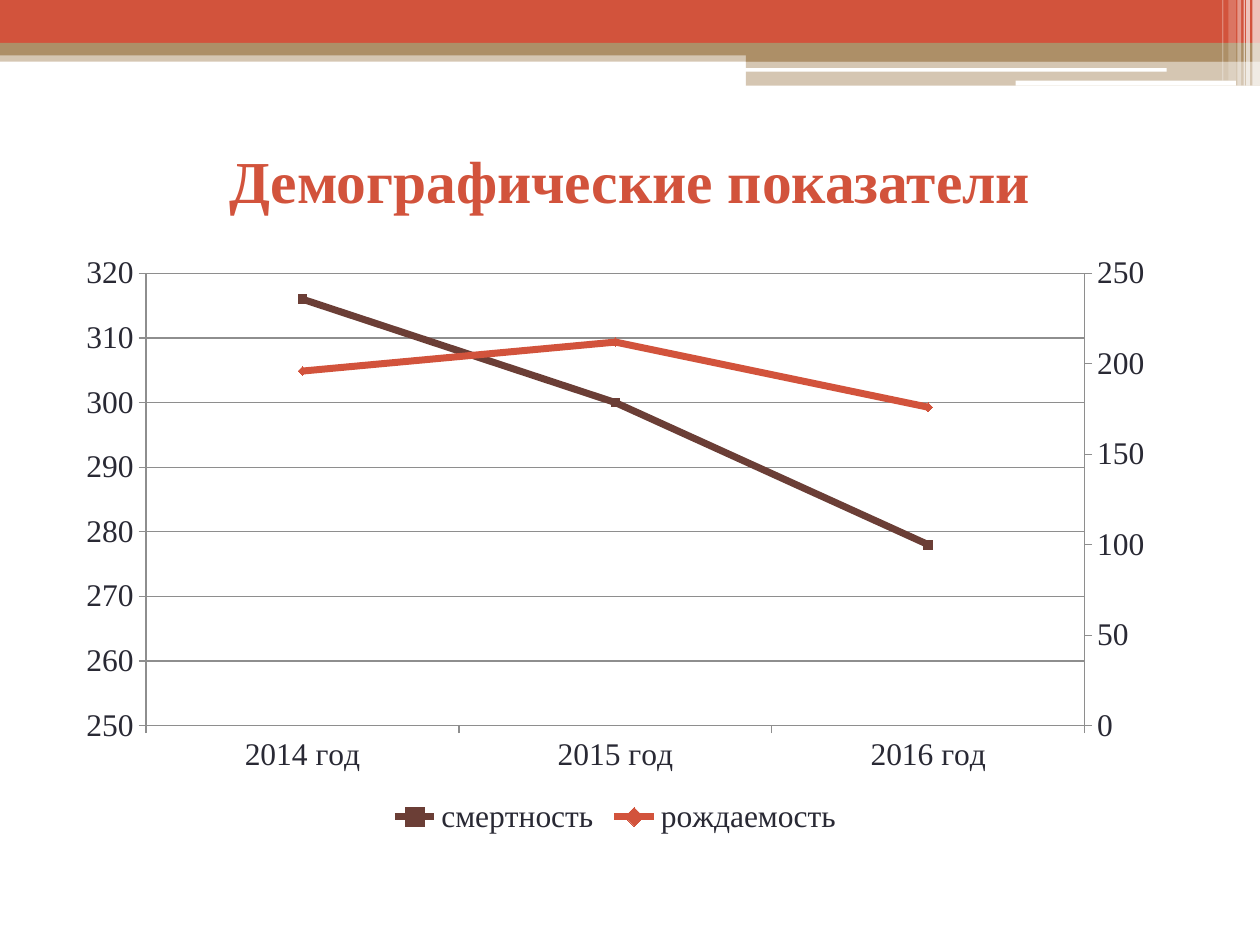
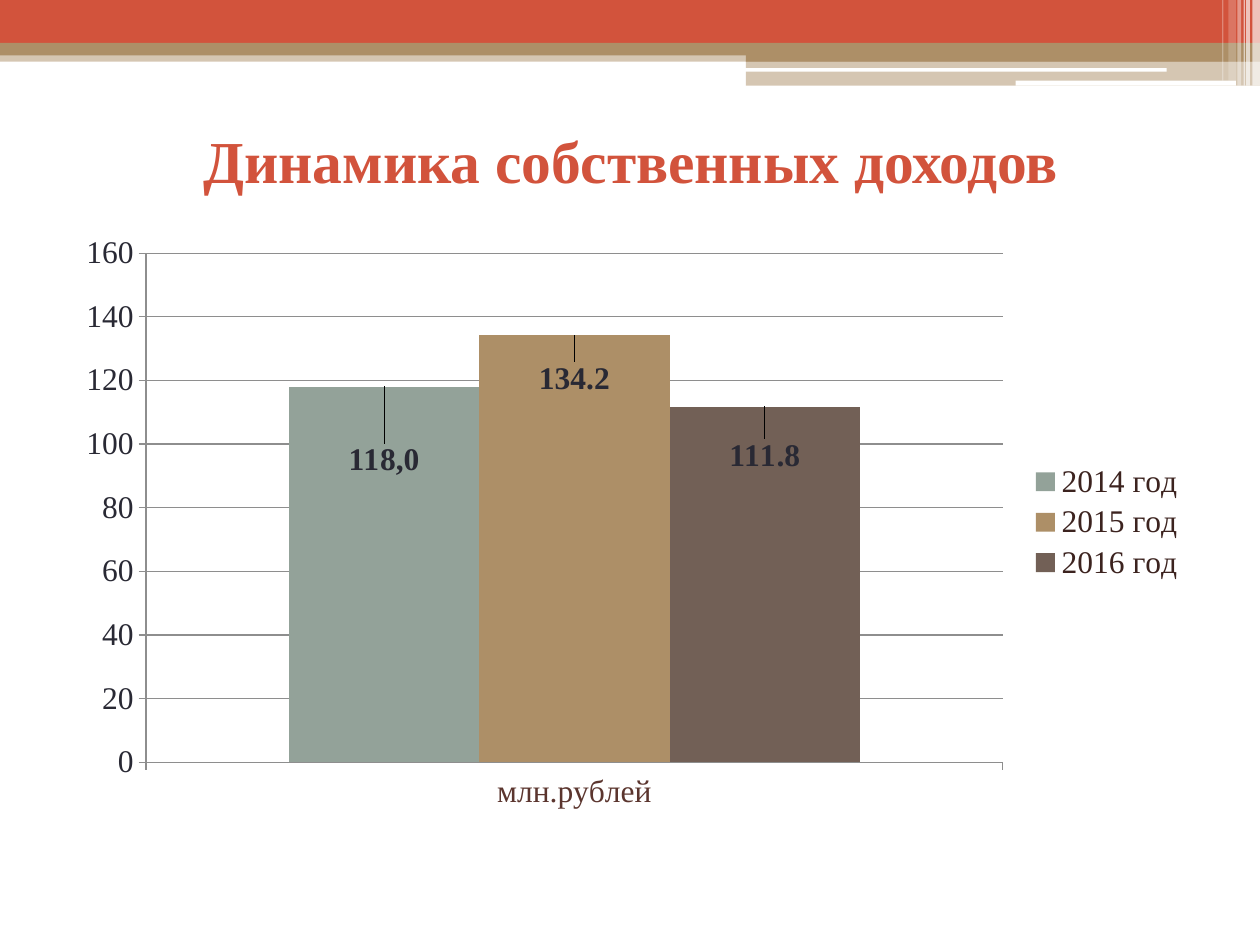
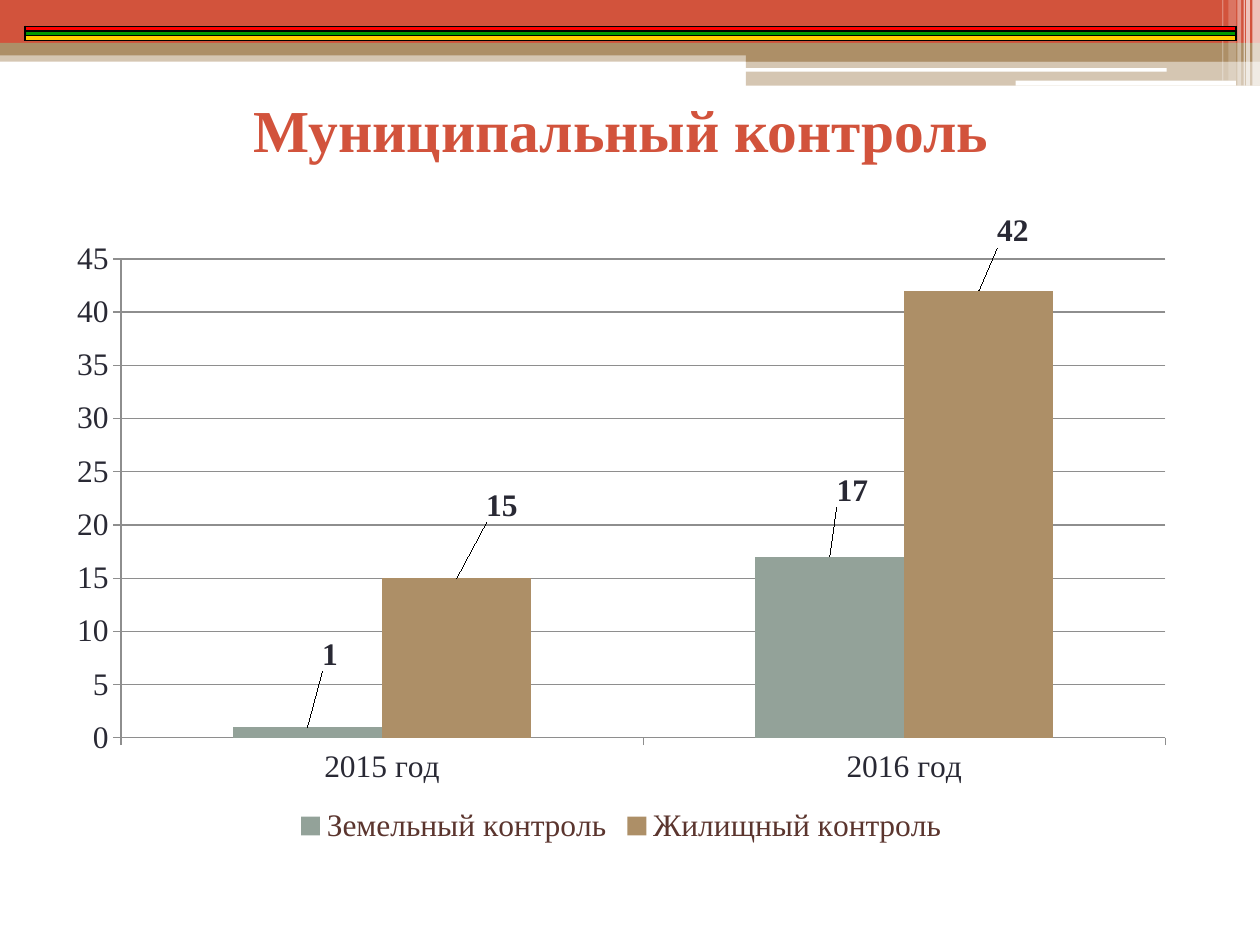
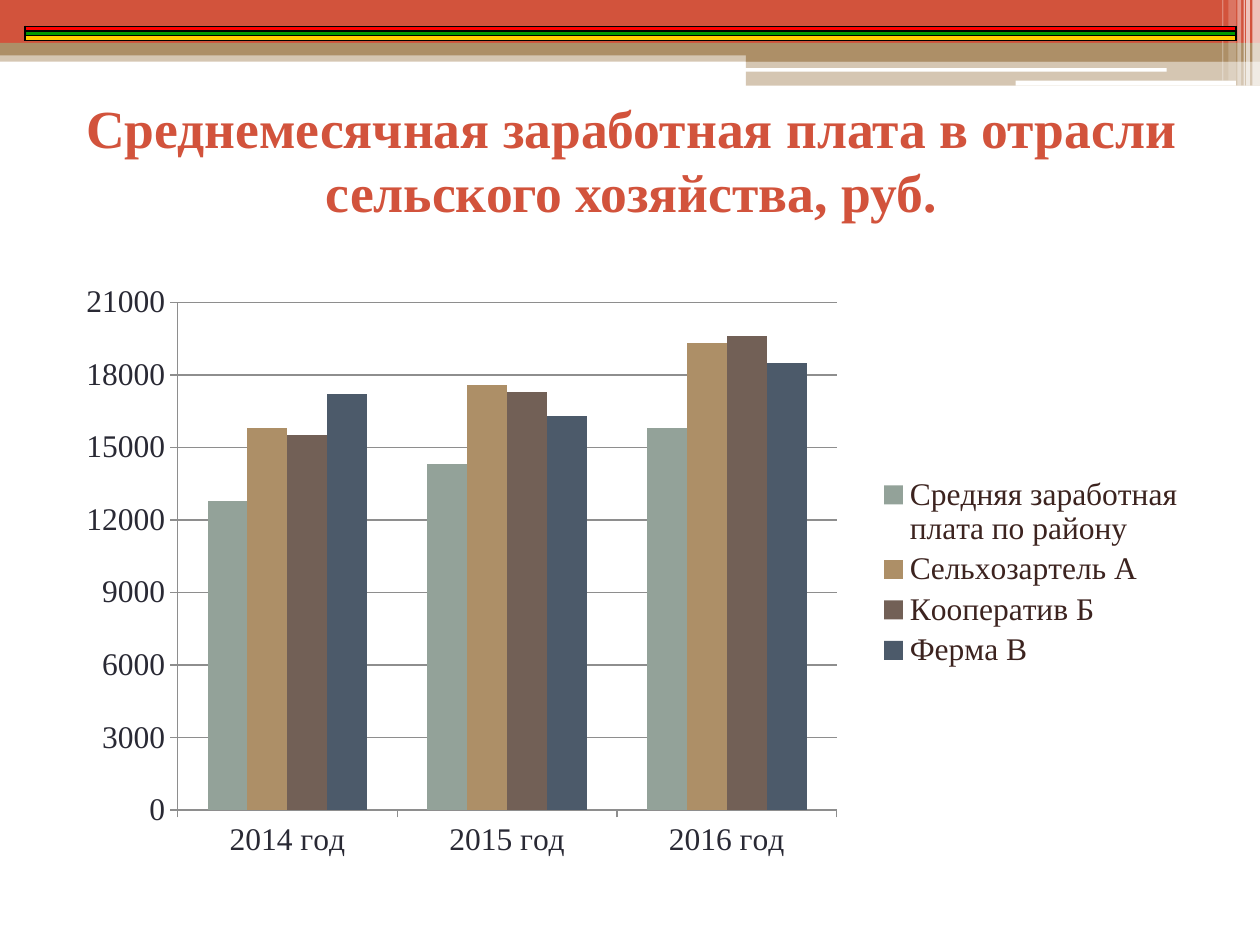
import copy

import lxml.etree
import pptx
import pptx.chart.axis
import pptx.chart.data
import pptx.dml.color
import pptx.enum.chart
import pptx.enum.shapes
import pptx.enum.text
import pptx.oxml.ns
import pptx.util

Inches, Pt = pptx.util.Inches, pptx.util.Pt
RGB = pptx.dml.color.RGBColor.from_string
SubElement, qn = lxml.etree.SubElement, pptx.oxml.ns.qn
ChartType = pptx.enum.chart.XL_CHART_TYPE
LegendPlace = pptx.enum.chart.XL_LEGEND_POSITION
Marker = pptx.enum.chart.XL_MARKER_STYLE
Shape = pptx.enum.shapes.MSO_SHAPE

FONT = "Times New Roman"
COLORS = {
    "red": "D2533C", "tan": "AD8F67", "white": "FFFFFF", "text": "292934",
    "sage": "93A299", "umber": "726056", "slate": "4C5A6A", "mortality": "6B3E36",
    "brown": "5B352E", "dark brown": "3C231F", "grid": "8E8E8E", "black": "000000",
    "flag red": "FF0000", "flag green": "009900", "flag yellow": "FFCC00",
}
COLUMN_COLORS = ["sage", "tan", "umber", "slate"]

# left, top, width, height, colour, opacity in percent
BANDS = [
    (0, 0.4, 10, 0.09, "tan", 50),
    (0, 0, 10, 0.34, "red", 100),
    (0, 0.34, 10, 0.1, "tan", 100),
    (5.92, 0.39, 4.08, 0.1, "tan", 100),
    (5.92, 0.48, 4.08, 0.2, "tan", 50),
    (5.91, 0.54, 3.35, 0.03, "white", 100),
    (8.06, 0.64, 1.75, 0.04, "white", 100),
    (9.94, 0, 0.06, 0.68, "white", 65),
    (9.89, 0, 0.03, 0.68, "white", 65),
    (9.87, 0, 0.01, 0.68, "white", 60),
    (9.82, 0, 0.03, 0.68, "white", 40),
    (9.75, 0, 0.06, 0.64, "white", 20),
    (9.7, 0, 0.01, 0.64, "white", 30),
]

# scale: minimum, maximum, step; labels: text or None, shift right, shift down
SLIDES = [
    {
        "title": "Демографические показатели", "title_at": (0.5, 0.84), "size": 34,
        "chart_at": (0.51, 1.94, 8.75, 4.73), "plot_at": (1.16, 2.17, 7.45, 3.59),
        "kind": ChartType.LINE_MARKERS_STACKED,
        "scale": (250, 320, 10), "right_scale": (0, 250, 50),
        "legend": LegendPlace.BOTTOM, "legend_color": "text", "category_color": "text",
        "categories": ["2014 год", "2015 год", "2016 год"],
        "series": {"смертность": [316, 300, 278], "рождаемость": [196, 212, 176]},
        "labels": [], "flag": False,
    },
    {
        "title": "Динамика собственных доходов", "title_at": (0.51, 0.68), "size": 34,
        "chart_at": (0.51, 1.78, 9, 4.73), "plot_at": (1.16, 2.01, 6.8, 4.04),
        "kind": ChartType.COLUMN_CLUSTERED, "scale": (0, 160, 20),
        "legend": LegendPlace.RIGHT, "legend_color": "dark brown", "category_color": "brown",
        "categories": ["млн.рублей"],
        "series": {"2014 год": [118], "2015 год": [134.2], "2016 год": [111.8]},
        "labels": [[("118,0", 0, 0.16)], [(None, 0, 0.11)], [(None, 0, 0.12)]],
        "flag": False,
    },
    {
        "title": "Муниципальный контроль", "title_at": (0.43, 0.44), "size": 34,
        "chart_at": (0.43, 1.7, 9, 5.04), "plot_at": (0.96, 2.02, 8.29, 3.83),
        "kind": ChartType.COLUMN_CLUSTERED, "scale": (0, 45, 5),
        "legend": LegendPlace.BOTTOM, "legend_color": "brown", "category_color": "text",
        "categories": ["2015 год", "2016 год"],
        "series": {"Земельный контроль": [1, 17], "Жилищный контроль": [15, 42]},
        "labels": [[(None, 0.02, -0.08), (None, 0.02, -0.07)],
                   [(None, 0.04, -0.08), (None, 0.03, -0.06)]],
        "flag": True,
    },
    {
        "title": "Среднемесячная заработная плата в отрасли сельского хозяйства, руб.",
        "title_at": (0.51, 0.68), "size": 30.6,
        "chart_at": (0.51, 2.18, 9, 4.73), "plot_at": (1.41, 2.4, 5.23, 4.03),
        "kind": ChartType.COLUMN_CLUSTERED, "scale": (0, 21000, 3000),
        "legend": LegendPlace.RIGHT, "legend_color": "dark brown", "category_color": "text",
        "categories": ["2014 год", "2015 год", "2016 год"],
        "series": {
            "Средняя заработная плата по району": [12800, 14300, 15800],
            "Сельхозартель А": [15800, 17600, 19300],
            "Кооператив Б": [15500, 17300, 19600],
            "Ферма В": [17200, 16300, 18500],
        },
        "labels": [], "flag": True,
    },
]


def style_font(font, size, color, bold=False):
    font.name, font.size, font.bold = FONT, Pt(size), bold
    font.color.rgb = RGB(COLORS[color])


def place_chart_part(parent, index, settings):
    """Insert a manual layout, given as (tag, value) pairs, as a child of parent."""
    for automatic in parent.findall(qn("c:layout")):
        parent.remove(automatic)
    layout = parent.makeelement(qn("c:layout"))
    parent.insert(index, layout)
    manual = SubElement(layout, qn("c:manualLayout"))
    for tag, value in settings:
        SubElement(manual, qn("c:" + tag)).set("val", str(value))


deck = pptx.Presentation()
deck.slide_width, deck.slide_height = Inches(10), Inches(7.5)

for content in SLIDES:
    slide = deck.slides.add_slide(deck.slide_layouts[6])

    for *box, color, opacity in BANDS:
        band = slide.shapes.add_shape(Shape.RECTANGLE, *map(Inches, box))
        band.shadow.inherit = False
        band.line.fill.background()
        band.fill.solid()
        band.fill.fore_color.rgb = RGB(COLORS[color])
        if opacity < 100:
            band_color = band.fill._xPr.find(".//" + qn("a:srgbClr"))
            SubElement(band_color, qn("a:alpha")).set("val", str(opacity * 1000))

    title = slide.shapes.add_textbox(*map(Inches, (*content["title_at"], 9, 1.17))).text_frame
    title.word_wrap = True
    title.vertical_anchor = pptx.enum.text.MSO_ANCHOR.MIDDLE
    title.paragraphs[0].alignment = pptx.enum.text.PP_ALIGN.CENTER
    heading = title.paragraphs[0].add_run()
    heading.text = content["title"]
    style_font(heading.font, content["size"], "red", True)

    figures = pptx.chart.data.CategoryChartData()
    figures.categories = content["categories"]
    for name, values in content["series"].items():
        figures.add_series(name, values)
    chart = slide.shapes.add_chart(
        content["kind"], *map(Inches, content["chart_at"]), figures).chart
    chart.has_title = False
    style_font(chart.font, 18, "text")
    chart.has_legend = True
    chart.legend.position = content["legend"]
    chart.legend.include_in_layout = False
    style_font(chart.legend.font, 18, content["legend_color"])

    value_axis = chart.value_axis
    value_axis.minimum_scale, value_axis.maximum_scale, value_axis.major_unit = content["scale"]
    value_axis.has_major_gridlines = True
    style_font(value_axis.tick_labels.font, 18, "text")
    style_font(chart.category_axis.tick_labels.font, 18, content["category_color"])
    for axis in (value_axis, chart.category_axis):
        axis.major_tick_mark = pptx.enum.chart.XL_TICK_MARK.OUTSIDE
    for rule in (value_axis, chart.category_axis, value_axis.major_gridlines):
        rule.format.line.color.rgb = RGB(COLORS["grid"])
        rule.format.line.width = Pt(0.75)

    plot = chart.plots[0]
    plot.vary_by_categories = False
    plot_area = chart._chartSpace.chart.plotArea
    left, top, width, height = content["chart_at"]
    plot_left, plot_top, plot_width, plot_height = content["plot_at"]
    place_chart_part(plot_area, 0, [
        ("layoutTarget", "inner"), ("xMode", "edge"), ("yMode", "edge"),
        ("x", (plot_left - left) / width), ("y", (plot_top - top) / height),
        ("w", plot_width / width), ("h", plot_height / height)])

    if "right_scale" in content:
        line_styles = [("mortality", Marker.SQUARE), ("red", Marker.DIAMOND)]
        for series, (color, marker) in zip(plot.series, line_styles):
            series.smooth = False
            series.format.line.color.rgb = RGB(COLORS[color])
            series.format.line.width = Pt(4)
            series.marker.style, series.marker.size = marker, 5
            series.marker.format.fill.solid()
            series.marker.format.fill.fore_color.rgb = RGB(COLORS[color])
            series.marker.format.line.color.rgb = RGB(COLORS[color])

        # The second series moves to its own line group with a right-hand axis.
        left_lines = plot_area.find(qn("c:lineChart"))
        right_lines = copy.deepcopy(left_lines)
        left_lines.remove(left_lines.findall(qn("c:ser"))[1])
        right_lines.remove(right_lines.findall(qn("c:ser"))[0])
        left_lines.addnext(right_lines)
        years = copy.deepcopy(plot_area.find(qn("c:catAx")))
        births = copy.deepcopy(plot_area.find(qn("c:valAx")))
        plot_area.find(qn("c:valAx")).addnext(births)
        births.addnext(years)
        for part, ids in ((right_lines, ("5001", "5002")), (years, ("5001",)),
                          (births, ("5002",))):
            for axis_id, number in zip(part.findall(qn("c:axId")), ids):
                axis_id.set("val", number)
        years.find(qn("c:crossAx")).set("val", "5002")
        years.find(qn("c:delete")).set("val", "1")
        births.find(qn("c:crossAx")).set("val", "5001")
        births.find(qn("c:axPos")).set("val", "r")
        births.find(qn("c:crosses")).set("val", "max")
        right_axis = pptx.chart.axis.ValueAxis(births)
        right_axis.has_major_gridlines = False
        (right_axis.minimum_scale, right_axis.maximum_scale,
         right_axis.major_unit) = content["right_scale"]
    else:
        plot.gap_width, plot.overlap = 150, 0
        for series, color in zip(plot.series, COLUMN_COLORS):
            series.format.fill.solid()
            series.format.fill.fore_color.rgb = RGB(COLORS[color])
        for series, labels in zip(plot.series, content["labels"]):
            for index, (wording, shift_right, shift_down) in enumerate(labels):
                label = series.points[index].data_label
                if wording:
                    run = label.text_frame.paragraphs[0].add_run()
                    run.text = wording
                    style_font(run.font, 18, "text", True)
                else:
                    style_font(label.font, 18, "text", True)
                label.position = pptx.enum.chart.XL_LABEL_POSITION.OUTSIDE_END
                place_chart_part(label._dLbl, 1, [("x", shift_right), ("y", shift_down)])

    if content["flag"]:
        flag = slide.shapes.add_table(
            3, 1, Inches(0.2), Inches(0.21), Inches(9.61), Inches(0.11)).table
        flag.first_row = flag.horz_banding = False
        for row, color in zip(flag.rows, ("flag red", "flag green", "flag yellow")):
            row.height = Inches(0.11 / 3)
            stripe = row.cells[0]
            stripe.margin_left = stripe.margin_right = 0
            stripe.margin_top = stripe.margin_bottom = 0
            SubElement(stripe.text_frame.paragraphs[0]._p, qn("a:endParaRPr")).set("sz", "100")
            for side in ("lnL", "lnR", "lnT", "lnB"):
                border = SubElement(stripe._tc.get_or_add_tcPr(), qn("a:" + side), w="12700")
                ink = SubElement(border, qn("a:solidFill"))
                SubElement(ink, qn("a:srgbClr")).set("val", COLORS["black"])
            stripe.fill.solid()
            stripe.fill.fore_color.rgb = RGB(COLORS[color])

deck.save("out.pptx")
